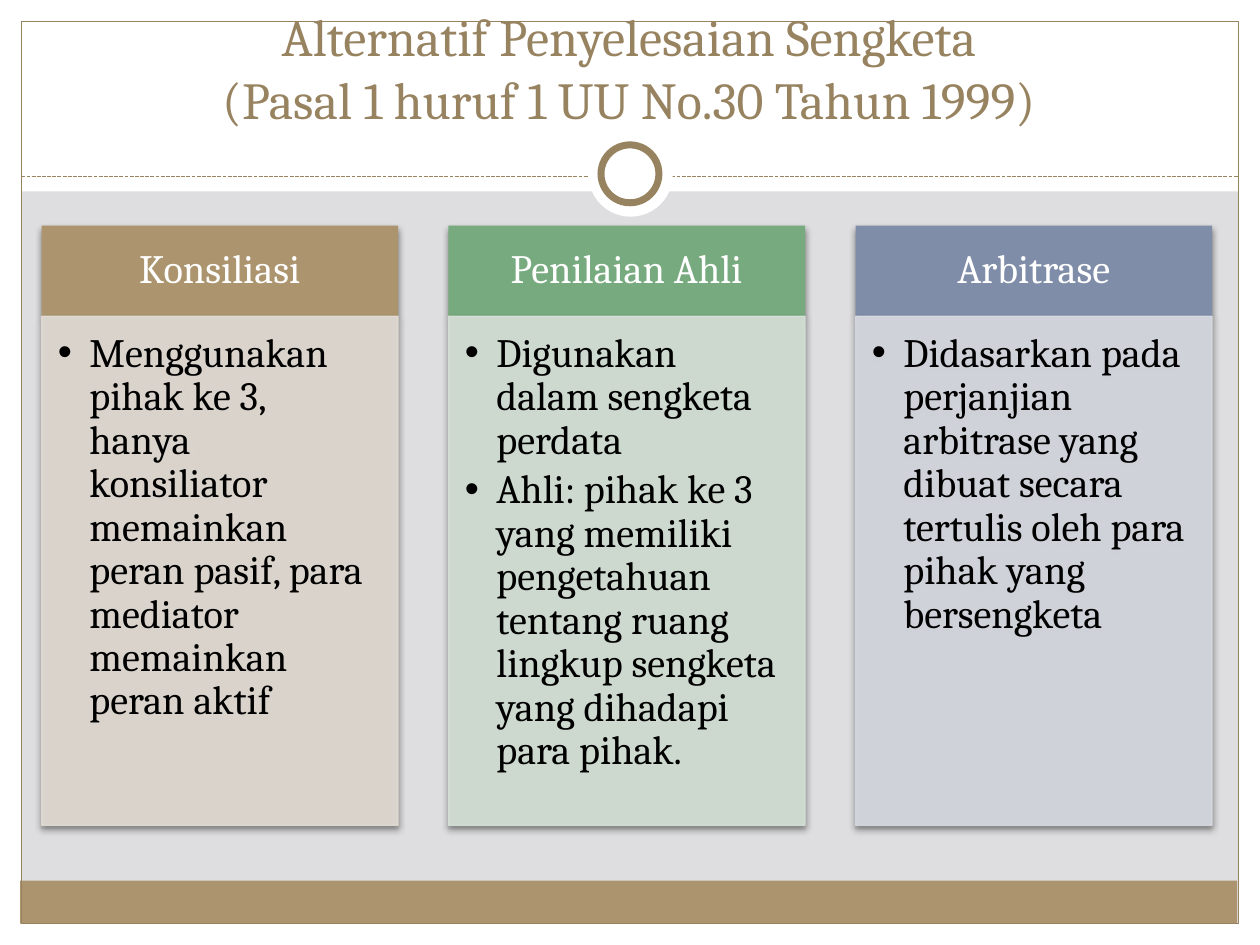
from lxml import etree
from pptx import Presentation
from pptx.dml.color import RGBColor
from pptx.enum.dml import MSO_LINE
from pptx.enum.shapes import MSO_CONNECTOR, MSO_SHAPE
from pptx.enum.text import MSO_ANCHOR, MSO_AUTO_SIZE, PP_ALIGN
from pptx.oxml.ns import qn
from pptx.util import Inches, Pt

RECT, OVAL = MSO_SHAPE.RECTANGLE, MSO_SHAPE.OVAL
STRAIGHT, SYS_DASH = MSO_CONNECTOR.STRAIGHT, MSO_LINE.SQUARE_DOT
TOP, MIDDLE, BOTTOM = MSO_ANCHOR.TOP, MSO_ANCHOR.MIDDLE, MSO_ANCHOR.BOTTOM
LEFT, CENTER = PP_ALIGN.LEFT, PP_ALIGN.CENTER
NO_FIT = MSO_AUTO_SIZE.NONE
TITLE_ONLY = 5

COLORS = {
    "background": "DEDEE0", "white": "FFFFFF", "black": "000000",
    "accent": "988361", "band": "AC956E",
    "sand": "AC956E", "sand_light": "E3DDD5",
    "green": "77AA7F", "green_light": "D6E2D8",
    "blue": "808DA9", "blue_light": "D8DBE2",
}

# Heading, colour, points
COLUMNS = [
    ("Konsiliasi", "sand", [
        "Menggunakan pihak ke 3, hanya konsiliator memainkan peran pasif, "
        "para mediator memainkan peran aktif"]),
    ("Penilaian Ahli", "green", [
        "Digunakan dalam sengketa perdata",
        "Ahli: pihak ke 3 yang memiliki pengetahuan tentang ruang lingkup "
        "sengketa yang dihadapi para pihak."]),
    ("Arbitrase", "blue", [
        "Didasarkan pada perjanjian arbitrase yang dibuat secara tertulis "
        "oleh para pihak yang bersengketa"]),
]


def rgb(color):
    return RGBColor.from_string(COLORS[color])


def apply(target, values):
    for name, value in values.items():
        setattr(target, name, value)


class SlideBuilder:
    font = "Cambria"

    def __init__(self, slide):
        self.slide = slide
        slide.background.fill.solid()
        slide.background.fill.fore_color.rgb = rgb("background")

    def box(self, area, fill=None, line=None, width=0.75, preset=RECT):
        shape = self.slide.shapes.add_shape(preset, *map(Inches, area))
        shape.shadow.inherit = False
        if fill:
            shape.fill.solid()
            shape.fill.fore_color.rgb = rgb(fill)
        else:
            shape.fill.background()
        if line:
            shape.line.color.rgb = rgb(line)
            shape.line.width = Pt(width)
        else:
            shape.line.fill.background()
        return shape

    def rule(self, left, right, y):
        ends = map(Inches, (left, y, right, y))
        rule = self.slide.shapes.add_connector(STRAIGHT, *ends)
        rule.line.color.rgb = rgb("accent")
        apply(rule.line, {"width": Pt(0.75), "dash_style": SYS_DASH})
        etree.SubElement(rule._element.spPr, qn("a:effectLst"))

    def fade(self, shape, percent):
        for color in shape._element.spPr.iter(qn("a:srgbClr")):
            etree.SubElement(color, qn("a:alpha"), val=str(percent * 1000))

    def drop_shadow(self, shape):
        effects = shape._element.spPr.find(qn("a:effectLst"))
        shadow = etree.SubElement(
            effects, qn("a:outerShdw"), blurRad=str(Pt(4)), dist=str(Pt(2)),
            dir="5400000", algn="ctr", rotWithShape="0")
        color = etree.SubElement(shadow, qn("a:srgbClr"), val=COLORS["black"])
        etree.SubElement(color, qn("a:alpha"), val="45000")

    def text(self, shape, lines, size, color, frame_format, line_format):
        frame = shape.text_frame
        apply(frame, {"word_wrap": True, "auto_size": NO_FIT, **frame_format})
        frame.text = "\n".join(lines)
        for paragraph in frame.paragraphs:
            apply(paragraph, line_format)
            for run in paragraph.runs:
                apply(run.font, {"name": self.font, "size": Pt(size)})
                run.font.color.rgb = rgb(color)

    def bullets(self, shape):
        indents = {"marL": Inches(0.25), "indent": Inches(-0.25)}
        for paragraph in shape.text_frame.paragraphs:
            props = paragraph._p.get_or_add_pPr()
            for name, value in indents.items():
                props.set(name, str(value))
            etree.SubElement(props, qn("a:buFont"), typeface="Arial")
            etree.SubElement(props, qn("a:buChar"), char="•")

    def title(self, text, area):
        title = self.slide.shapes.title
        apply(title, dict(zip(("left", "top", "width", "height"),
                              map(Inches, area))))
        self.text(title, [text], 29.7, "accent",
                  {"vertical_anchor": BOTTOM}, {"alignment": CENTER})
        # Bring the title in front of the white header
        self.slide.shapes._spTree.append(title._element)

    def column(self, left, heading, color, points):
        width, top, head_height, body_height = 2.83, 1.79, 0.72, 4.04
        head = self.box((left, top, width, head_height), color)
        self.drop_shadow(head)
        self.text(head, [heading], 23, "white",
                  {"vertical_anchor": MIDDLE,
                   "margin_left": Inches(0.18), "margin_right": Inches(0.18),
                   "margin_top": Inches(0.1), "margin_bottom": Inches(0.1)},
                  {"alignment": CENTER, "line_spacing": 0.9})

        pale = color + "_light"
        body = self.box((left, top + head_height, width, body_height),
                        pale, pale)
        self.fade(body, 90)
        self.drop_shadow(body)
        self.text(body, points, 23, "black",
                  {"vertical_anchor": TOP,
                   "margin_left": Inches(0.13), "margin_right": Inches(0.18),
                   "margin_top": Inches(0.13), "margin_bottom": Inches(0.2)},
                  {"alignment": LEFT, "line_spacing": 0.9,
                   "space_after": Pt(3.45)})
        self.bullets(body)


def main():
    deck = Presentation()
    apply(deck, {"slide_width": Inches(10), "slide_height": Inches(7.5)})
    layout = deck.slide_layouts[TITLE_ONLY]
    builder = SlideBuilder(deck.slides.add_slide(layout))

    # White margins and header
    for area in ((0, 7.33, 10, 0.17), (0, 0, 10, 1.52),
                 (0, 0, 0.17, 7.5), (9.83, 0, 0.17, 7.5)):
        builder.box(area, "white")

    # Footer band, frame and divider with ring
    builder.box((0.16, 6.99, 9.66, 0.34), "band")
    builder.box((0.17, 0.17, 9.66, 7.16), line="accent")
    builder.rule(0.17, 9.83, 1.4)
    builder.box((4.67, 1.05, 0.67, 0.67), "white", preset=OVAL)
    builder.box((4.77, 1.15, 0.46, 0.46), "white", "accent", 4, OVAL)

    # Title
    builder.title("Alternatif Penyelesaian Sengketa\v"
                  "(Pasal 1 huruf 1 UU No.30 Tahun 1999)",
                  (0.33, 0.25, 9.33, 0.83))

    # Columns
    for index, (heading, color, points) in enumerate(COLUMNS):
        builder.column(0.33 + index * 3.23, heading, color, points)

    deck.save("out.pptx")


if __name__ == "__main__":
    main()
